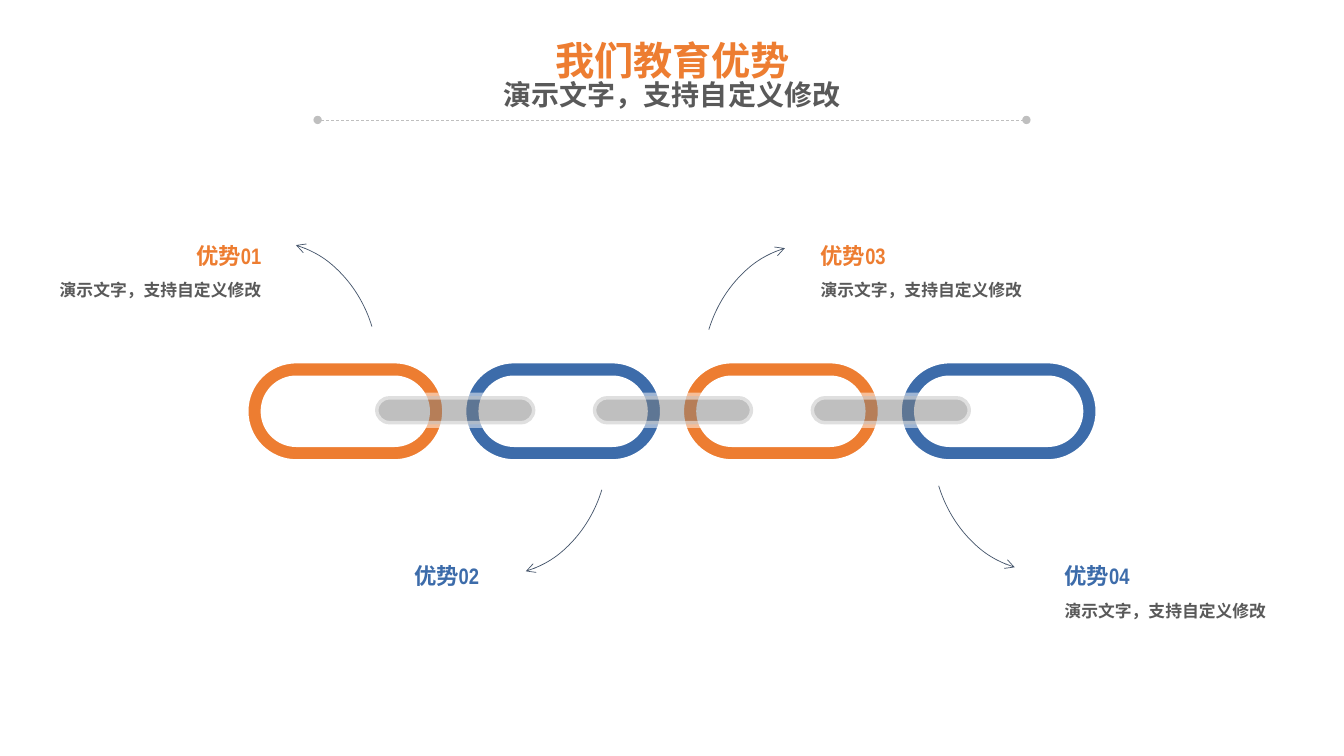
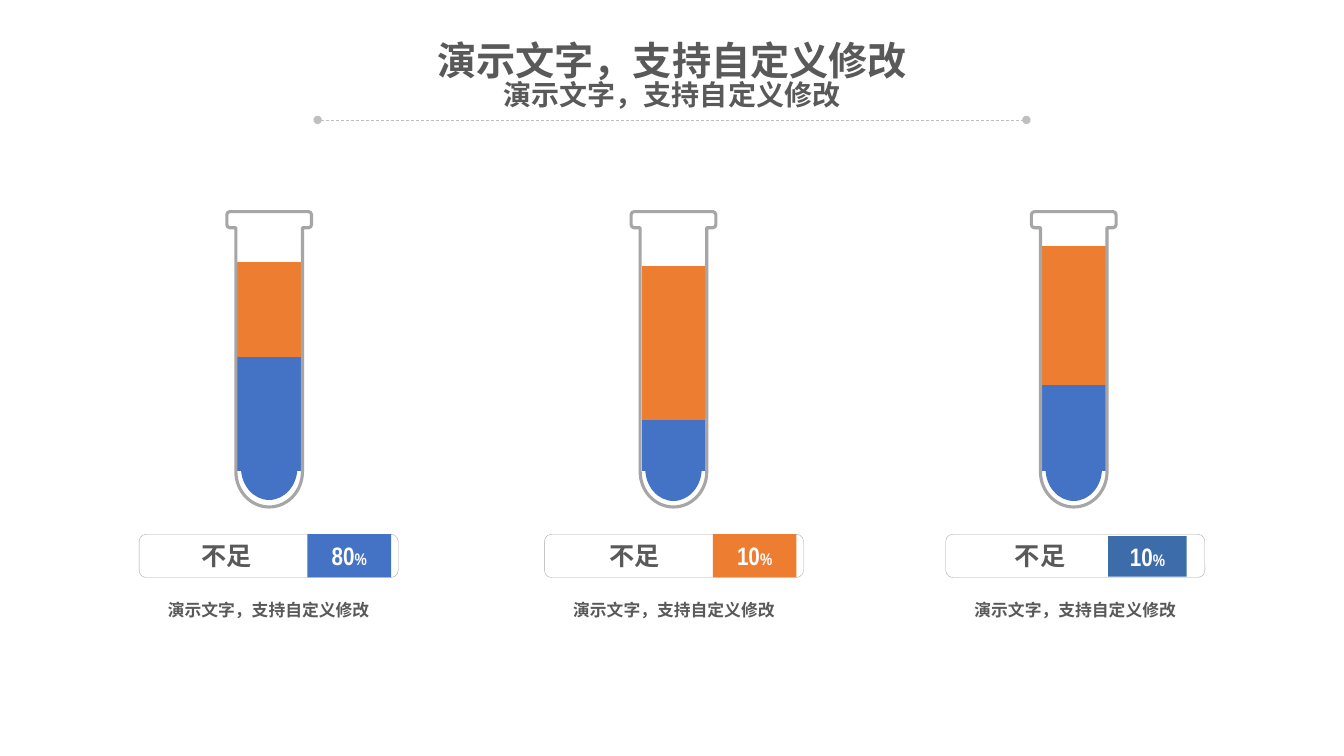
"""Build two slides: a chain of four advantages and three test-tube charts."""
from math import cos, radians, sin

from lxml.etree import SubElement
from pptx import Presentation
from pptx.chart.data import CategoryChartData
from pptx.dml.color import RGBColor
from pptx.enum.chart import XL_CHART_TYPE as ChartType
from pptx.enum.dml import MSO_LINE
from pptx.enum.shapes import MSO_CONNECTOR, MSO_SHAPE
from pptx.enum.text import MSO_ANCHOR, MSO_AUTO_SIZE, PP_ALIGN
from pptx.oxml.ns import qn
from pptx.util import Inches, Pt

ORANGE = RGBColor(0xED, 0x7D, 0x31)
BLUE = RGBColor(0x3D, 0x6C, 0xAA)
LIQUID_BLUE = RGBColor(0x44, 0x72, 0xC4)
DARK_GRAY = RGBColor(0x59, 0x59, 0x59)
MID_GRAY = RGBColor(0x80, 0x80, 0x80)
GLASS_GRAY = RGBColor(0xA6, 0xA6, 0xA6)
RULE_GRAY = RGBColor(0xBF, 0xBF, 0xBF)
NAVY = RGBColor(0x44, 0x54, 0x6A)
WHITE = RGBColor(0xFF, 0xFF, 0xFF)
LATIN_FONT = "Arial Narrow"
CJK_FONT = "Noto Sans CJK SC"
SAMPLE = "演示文字，支持自定义修改"
QUARTER_HANDLE = 0.5523


def write_text(shape, runs, color, align=PP_ALIGN.CENTER, font=LATIN_FONT, wrap=True):
    """Fill a shape with one bold paragraph of (text, size) runs."""
    frame = shape.text_frame
    frame.word_wrap = wrap
    frame.auto_size = MSO_AUTO_SIZE.SHAPE_TO_FIT_TEXT
    paragraph = frame.paragraphs[0]
    paragraph.alignment = align
    for text, size in runs:
        run = paragraph.add_run()
        run.text = text
        run.font.color.rgb = color
        for name, value in {"size": Pt(size), "bold": True, "name": font}.items():
            setattr(run.font, name, value)
        SubElement(run.font._element, qn("a:ea"), typeface=CJK_FONT)


def add_outline(slide, contours):
    """Draw closed contours of (cx, cy, rx, ry, start, quarter turns) arcs; no radius gives a corner."""
    builder = None
    segment_handles = []
    for arcs in contours:
        points = []
        for cx, cy, rx, ry, start, turns in arcs:
            direction = 1 if turns >= 0 else -1
            for turn in range(abs(turns) + 1):
                angle = radians(start + 90 * turn * direction)
                across, down = cos(angle), sin(angle)
                if points:
                    before = radians(start + 90 * (turn - 1) * direction)
                    reach = QUARTER_HANDLE * direction
                    segment_handles.append([
                        (cx + rx * (cos(before) - reach * sin(before)),
                         cy + ry * (sin(before) + reach * cos(before))),
                        (cx + rx * (across + reach * down), cy + ry * (down - reach * across)),
                    ] if turn else [])
                points.append((Inches(cx + rx * across), Inches(cy + ry * down)))
        if builder is None:
            builder = slide.shapes.build_freeform(*points[0], scale=1.0)
        else:
            builder.move_to(*points[0])
        builder.add_line_segments(points[1:], close=True)
    shape = builder.convert_to_shape()
    shape.shadow.inherit = False
    segments = list(shape._element.spPr.iter(qn("a:lnTo")))
    for segment, handles in zip(segments, segment_handles):
        if handles:
            segment.tag = qn("a:cubicBezTo")
        for position, (x, y) in enumerate(handles):
            handle = SubElement(segment, qn("a:pt"), x=str(Inches(x) - shape.left),
                                y=str(Inches(y) - shape.top))
            segment.insert(position, handle)
    return shape


presentation = Presentation()
presentation.slide_width = Inches(13.33)
presentation.slide_height = Inches(7.5)

slides = []
for title, left, width, color, font in [
    ("我们教育优势", 5.39, 2.56, ORANGE, LATIN_FONT),
    (SAMPLE, 4.22, 4.89, DARK_GRAY, CJK_FONT),
]:
    slide = presentation.slides.add_slide(presentation.slide_layouts[6])
    slides.append(slide)
    for text, size, box, text_color, text_font in [
        (title, 28, (left, 0.31, width, 0.57), color, font),
        (SAMPLE, 20, (4.89, 0.72, 3.55, 0.44), DARK_GRAY, CJK_FONT),
    ]:
        heading = slide.shapes.add_textbox(*map(Inches, box))
        write_text(heading, [(text, size)], text_color, font=text_font, wrap=False)
    rule = slide.shapes.add_connector(
        MSO_CONNECTOR.STRAIGHT, Inches(3.15), Inches(1.19), Inches(10.18), Inches(1.19))
    rule.line.color.rgb = RULE_GRAY
    rule.line.width = Pt(0.5)
    rule.line.dash_style = MSO_LINE.DASH
    for end in ("a:headEnd", "a:tailEnd"):
        SubElement(rule.line._get_or_add_ln(), qn(end), type="oval")
    SubElement(rule._element.spPr, qn("a:effectLst"))
chain_slide, tube_slide = slides

LINK_PITCH = 2.16
CHAIN_MIDDLE = 4.08
for index in range(4):
    left_center = 2.94 + index * LINK_PITCH
    right_center = left_center + 0.97
    link = add_outline(chain_slide, [
        [(left_center, CHAIN_MIDDLE, 0.51, 0.51, 90, 2),
         (right_center, CHAIN_MIDDLE, 0.51, 0.51, 270, 2)],
        [(right_center, CHAIN_MIDDLE, 0.32, 0.32, 90, -2),
         (left_center, CHAIN_MIDDLE, 0.32, 0.32, 270, -2)],
    ])
    link.fill.solid()
    link.fill.fore_color.rgb = (ORANGE, BLUE)[index % 2]
    link.line.color.rgb = WHITE
    link.line.width = Pt(5)

for index in range(3):
    left_center = 3.86 + index * LINK_PITCH
    bar = add_outline(chain_slide, [[
        (left_center, 4.07, 0.14, 0.14, 90, 2),
        (left_center + 1.31, 4.07, 0.14, 0.14, 270, 2),
    ]])
    bar.fill.solid()
    bar.fill.fore_color.rgb = MID_GRAY
    bar.line.color.rgb = WHITE
    bar.line.width = Pt(5)
    for color in bar._element.spPr.iter(qn("a:srgbClr")):
        SubElement(color, qn("a:alpha"), val="50000")

for number, left, top, width, detail_left, color, align in [
    ("01", 1.58, 2.35, 1.11, 0.27, ORANGE, PP_ALIGN.RIGHT),
    ("02", 3.74, 5.53, 1.11, None, BLUE, PP_ALIGN.RIGHT),
    ("03", 8.04, 2.35, 2.05, 8.04, ORANGE, PP_ALIGN.LEFT),
    ("04", 10.46, 5.53, 2.05, 10.46, BLUE, PP_ALIGN.LEFT),
]:
    heading = chain_slide.shapes.add_textbox(Inches(left), Inches(top), Inches(width), Inches(0.37))
    write_text(heading, [("优势" + number, 16)], color, align)
    if detail_left is not None:
        detail = chain_slide.shapes.add_textbox(
            Inches(detail_left), Inches(top + 0.38), Inches(2.42), Inches(0.3))
        write_text(detail, [(SAMPLE, 12)], DARK_GRAY, align)

for left, top, rotation, flips in [
    (1.84, 2.38, 343.1, ()),
    (4.12, 3.45, 16.9, ("flipV",)),
    (6.99, 2.41, 16.9, ("flipH",)),
    (9.27, 3.41, 343.1, ("flipH", "flipV")),
]:
    arrow = chain_slide.shapes.add_shape(
        MSO_SHAPE.ARC, Inches(left), Inches(top), Inches(1.89), Inches(2.27))
    arrow.adjustments[0] = 176.88
    arrow.adjustments[1] = 0
    arrow.rotation = rotation
    for flip in flips:
        arrow._element.spPr.xfrm.set(flip, "1")
    arrow.shadow.inherit = False
    arrow.fill.background()
    arrow.line.color.rgb = NAVY
    arrow.line.width = Pt(0.5)
    SubElement(arrow.line._get_or_add_ln(), qn("a:headEnd"), type="arrow")

for center, values, maximum, bowl_top, label_left, word_left, percent, badge_box, badge_color in [
    (2.67, (100, 27, 27, 29), 198, 4.62, 1.38, 1.89, "80", (3.05, 5.3, 0.83, 0.43), LIQUID_BLUE),
    (6.68, (100, 100, 100, 100), 441, 4.63, 5.4, 5.94, "10", (7.07, 5.3, 0.83, 0.43), ORANGE),
    (10.65, (100, 43, 71, 46), 262, 4.63, 9.38, 9.96, "10", (10.99, 5.32, 0.78, 0.4), BLUE),
]:
    caption = tube_slide.shapes.add_textbox(
        Inches(label_left), Inches(5.95), Inches(2.57), Inches(0.2))
    for side in ("left", "top", "right", "bottom"):
        setattr(caption.text_frame, "margin_" + side, 0)
    write_text(caption, [(SAMPLE, 12)], DARK_GRAY)

    label = tube_slide.shapes.add_shape(
        MSO_SHAPE.ROUNDED_RECTANGLE, Inches(label_left), Inches(5.3), Inches(2.57), Inches(0.43))
    label.shadow.inherit = False
    label.fill.background()
    label.line.color.rgb = GLASS_GRAY
    label.line.width = Pt(0.25)

    badge = tube_slide.shapes.add_shape(MSO_SHAPE.RECTANGLE, *map(Inches, badge_box))
    badge.shadow.inherit = False
    badge.fill.solid()
    badge.fill.fore_color.rgb = badge_color
    badge.line.fill.background()
    badge.text_frame.vertical_anchor = MSO_ANCHOR.MIDDLE
    write_text(badge, [(percent, 18), ("%", 12)], WHITE)

    word = tube_slide.shapes.add_textbox(
        Inches(word_left), Inches(5.31), Inches(0.71), Inches(0.4))
    write_text(word, [("不足", 18)], DARK_GRAY, wrap=False)

    chart_data = CategoryChartData()
    chart_data.categories = ["1"]
    for number, value in enumerate(values, 1):
        chart_data.add_series(f"Series {number}", [value])
    chart = tube_slide.shapes.add_chart(
        ChartType.COLUMN_STACKED, Inches(center - 0.61), Inches(2.17), Inches(1.22), Inches(2.56),
        chart_data).chart
    chart.has_legend = False
    chart.has_title = False
    chart.font.size = Pt(10)
    chart.font.name = LATIN_FONT
    chart.category_axis.visible = False
    chart.value_axis.visible = False
    chart.value_axis.has_major_gridlines = False
    chart.value_axis.minimum_scale = 0
    chart.value_axis.maximum_scale = maximum
    plot = chart.plots[0]
    plot.gap_width = 85
    plot.overlap = 100
    plot.vary_by_categories = False
    for series, color in zip(plot.series, (LIQUID_BLUE, ORANGE, ORANGE, ORANGE)):
        series.format.fill.solid()
        series.format.fill.fore_color.rgb = color
    plot_area = chart._chartSpace.chart.plotArea
    for old_layout in plot_area.findall(qn("c:layout")):
        plot_area.remove(old_layout)
    layout = SubElement(plot_area, qn("c:layout"))
    plot_area.insert(0, layout)
    manual = SubElement(layout, qn("c:manualLayout"))
    for name, value in {"layoutTarget": "inner", "xMode": "edge", "yMode": "edge",
                        "x": "0.02", "y": "0.1", "w": "0.96", "h": "0.88"}.items():
        SubElement(manual, qn("c:" + name), val=value)

    tube = add_outline(tube_slide, [[
        (center - 0.39, 2.13, 0.03, 0.03, 180, 1),
        (center + 0.39, 2.13, 0.03, 0.03, 270, 1),
        (center + 0.39, 2.23, 0.03, 0.03, 0, 1),
        (center + 0.33, 2.26, 0, 0, 0, 0),
        (center, 4.68, 0.33, 0.35, 0, 2),
        (center - 0.33, 2.26, 0, 0, 0, 0),
        (center - 0.39, 2.23, 0.03, 0.03, 90, 1),
    ]])
    tube.fill.background()
    tube.line.color.rgb = GLASS_GRAY
    tube.line.width = Pt(2.25)

    bowl = add_outline(tube_slide, [[
        (center - 0.28, bowl_top, 0, 0, 0, 0),
        (center + 0.28, bowl_top, 0, 0, 0, 0),
        (center, bowl_top + 0.02, 0.28, 0.32, 0, 2),
    ]])
    bowl.fill.solid()
    bowl.fill.fore_color.rgb = LIQUID_BLUE
    bowl.line.fill.background()

presentation.save("out.pptx")
